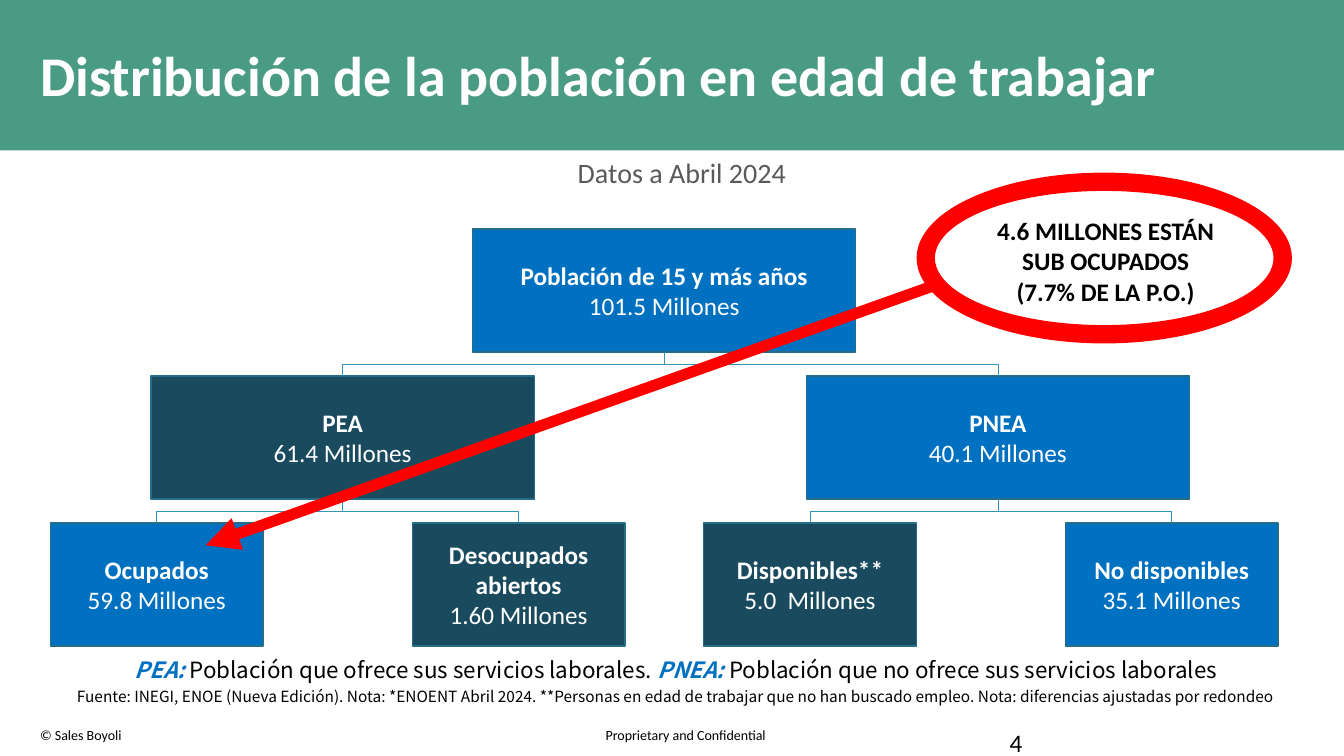
from lxml.etree import SubElement
from pptx import Presentation
from pptx.dml.color import RGBColor
from pptx.enum.shapes import MSO_CONNECTOR, MSO_SHAPE
from pptx.enum.text import MSO_ANCHOR, MSO_AUTO_SIZE, PP_ALIGN
from pptx.oxml.ns import qn
from pptx.util import Pt

WIDE, HIGH = 960, 540
FONT, NOTE = "Calibri", "Noto Sans CJK KR"
HUES = {
    "band": "4A9B83", "blue": "0070C0", "dark": "1A4A5D", "edge": "266D8A",
    "link": "3494BA", "red": "FF0000", "gray": "595959",
    "white": "FFFFFF", "black": "000000",
}
# Node: name, amount, fill, left, width, level, parent
NODES = [
    ("Población de 15 y más años", "101.5 Millones", "blue", 301.7, 273.6, 0, None),
    ("PEA", "61.4 Millones", "dark", 72, 273.6, 1, 0),
    ("PNEA", "40.1 Millones", "blue", 540, 273.6, 1, 0),
    ("Ocupados", "59.8 Millones", "blue", 0, 152, 2, 1),
    ("Desocupados abiertos", "1.60 Millones", "dark", 258.5, 152, 2, 1),
    ("Disponibles**", "5.0  Millones", "dark", 466.6, 152, 2, 2),
    ("No disponibles", "35.1 Millones", "blue", 725, 152, 2, 2),
]


def hue(key):
    return RGBColor.from_string(HUES[key])


def style(font, size, color, bold=False, name=FONT):
    font.name, font.size, font.bold = name, Pt(size), bold
    font.color.rgb = hue(color)


def block(slide, kind, box, fill, edge=None):
    shape = slide.shapes.add_shape(kind, *map(Pt, box))
    shape.shadow.inherit = False
    shape.fill.solid()
    shape.fill.fore_color.rgb = hue(fill)
    if edge:
        shape.line.color.rgb = hue(edge)
        shape.line.width = Pt(1)
    else:
        shape.line.fill.background()
    return shape


def label(slide, box, lines, size, color="black", bold=False, name=FONT,
          align=PP_ALIGN.LEFT, wrap=True):
    frame = slide.shapes.add_textbox(*map(Pt, box)).text_frame
    frame.word_wrap = wrap
    frame.text = "\n".join(lines)
    for para in frame.paragraphs:
        para.alignment = align
        style(para.font, size, color, bold, name)
    return frame


def stroke(line, color, width):
    line.line.color.rgb = hue(color)
    line.line.width = Pt(width)
    SubElement(line._element.spPr, qn("a:effectLst"))


def header(slide, box):
    x, y, w, h = box
    band = block(slide, MSO_SHAPE.RECTANGLE, box, "band")
    slide.shapes._spTree.insert(2, band._element)
    title = slide.shapes.title
    title.left, title.top = Pt(x + 21.6), Pt(y + 10)
    title.width, title.height = Pt(w - 44), Pt(91.5)
    frame = title.text_frame
    frame.text = "Distribución de la población en edad de trabajar"
    frame.auto_size = MSO_AUTO_SIZE.NONE
    frame.vertical_anchor = MSO_ANCHOR.MIDDLE
    para = frame.paragraphs[0]
    para.alignment, para.line_spacing = PP_ALIGN.LEFT, 0.9
    style(para.font, 40, "white", True)
    label(slide, (x + 235.4, y + h, 503.3, 55.4), ["Datos a Abril 2024"], 20,
          "gray", align=PP_ALIGN.CENTER)


def elbow(slide, top, low):
    """Join the foot of one node to the head of another."""
    x1, y1 = top.left + top.width // 2, top.top + top.height
    x2, y2 = low.left + low.width // 2, low.top
    line = slide.shapes.add_connector(MSO_CONNECTOR.ELBOW, x1, y1, x2, y2)
    line.begin_connect(top, 2)
    line.end_connect(low, 0)
    # A quarter turn makes the elbow leave downwards
    drop, span = y2 - y1, abs(x2 - x1)
    line.left, line.top = (x1 + x2 - drop) // 2, (y1 + y2 - span) // 2
    line.width, line.height = drop, span
    xfrm = line._element.spPr.find(qn("a:xfrm"))
    for flip in ("flipH", "flipV"):
        xfrm.attrib.pop(flip, None)
    right = x2 > x1
    xfrm.set("rot", "16200000" if right else "5400000")
    if right:
        xfrm.set("flipH", "1")
    stroke(line, "link", 0.5)


def tree(slide, box):
    x, y, w, h = box
    tall = 87.8
    step = (h - tall) / 2
    made = []
    for name, amount, fill, left, wide, level, _ in NODES:
        node = block(slide, MSO_SHAPE.FLOWCHART_PROCESS,
                     (x + left, y + level * step, wide, tall), fill, "edge")
        frame = node.text_frame
        frame.text = f"{name}\n{amount}"
        frame.word_wrap = True
        frame.vertical_anchor = MSO_ANCHOR.MIDDLE
        for para, bold in zip(frame.paragraphs, (True, False)):
            para.alignment = PP_ALIGN.CENTER
            style(para.font, 18, "white", bold)
        made.append(node)
    for node, spec_row in zip(made, NODES):
        if spec_row[-1] is not None:
            elbow(slide, made[spec_row[-1]], node)


def legend(slide, box):
    x, y, w, h = box
    frame = label(slide, (x, y, w, 26.6), [""], 16, name=NOTE,
                  align=PP_ALIGN.CENTER)
    frame.vertical_anchor = MSO_ANCHOR.MIDDLE
    para = frame.paragraphs[0]
    for term, text in (
        ("PEA:", " Población que ofrece sus servicios laborales. "),
        ("PNEA:", " Población que no ofrece sus servicios laborales"),
    ):
        run = para.add_run()
        run.text = term
        style(run.font, 16, "blue", True, NOTE)
        run.font.italic = True
        run = para.add_run()
        run.text = text
        style(run.font, 16, "black", False, NOTE)
    source = label(slide, (x, y + 22.4, w, 20.6), [
        "Fuente: INEGI, ENOE (Nueva Edición). Nota: *ENOENT Abril 2024. "
        "**Personas en edad de trabajar que no han buscado empleo. "
        "Nota: diferencias ajustadas por redondeo"],
        11, name=NOTE, align=PP_ALIGN.CENTER)
    source.vertical_anchor = MSO_ANCHOR.MIDDLE


def callout(slide, box):
    x, y, w, h = box
    # Arrow to the employed
    arrow = slide.shapes.add_connector(
        MSO_CONNECTOR.STRAIGHT,
        *map(Pt, (x + 18.7, y + 77.8, x - 508.3, y + 265.7)))
    stroke(arrow, "red", 8)
    SubElement(arrow.line._get_or_add_ln(), qn("a:tailEnd"), type="triangle")
    # Ring and its words
    label(slide, (x + 37.4, y + 26.6, 194.4, 72.7),
          ["4.6 MILLONES ESTÁN SUB OCUPADOS", "(7.7% DE LA P.O.)"], 18,
          bold=True, align=PP_ALIGN.CENTER)
    ring = block(slide, MSO_SHAPE.DONUT, box, "red", "red")
    ring.adjustments[0] = 0.1


def footer(slide, box):
    x, y, w, h = box
    label(slide, (x + 21.6, y, 242.6, h), ["© Sales Boyoli"], 10)
    label(slide, (x + 425.5, y, 130.3, h), ["Proprietary and Confidential"], 10,
          wrap=False)
    label(slide, (x + 714.2, y + 0.7, 224, h), ["4"], 18)


def main():
    deck = Presentation()
    deck.slide_width, deck.slide_height = Pt(WIDE), Pt(HIGH)
    slide = deck.slides.add_slide(deck.slide_layouts[5])
    header(slide, (0, 0, WIDE, 107.5))
    tree(slide, (36, 163.5, 877, 298))
    legend(slide, (2.9, 465, WIDE, 43))
    callout(slide, (655.2, 123.8, 267.1, 121))
    footer(slide, (0, 515.5, WIDE, 19.4))
    deck.save("out.pptx")


if __name__ == "__main__":
    main()
